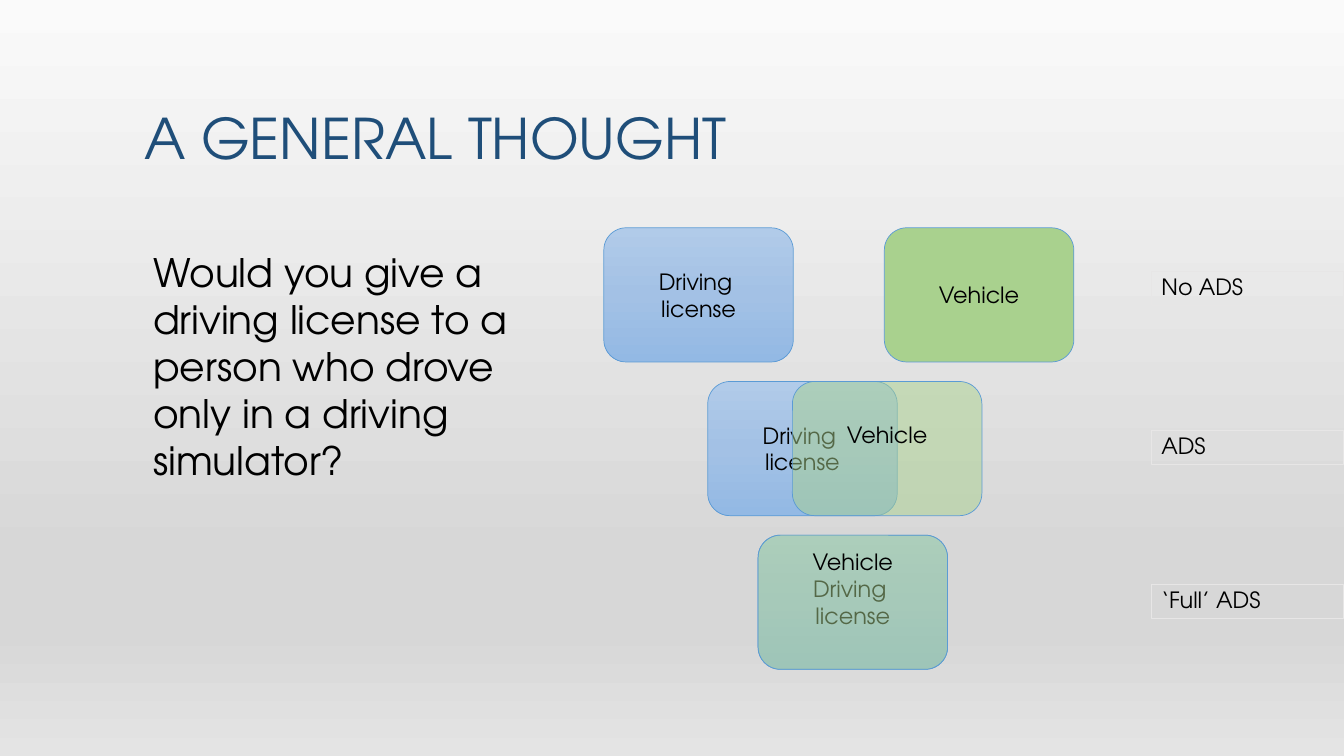
from dataclasses import dataclass

from lxml.etree import SubElement
from pptx import Presentation
from pptx.dml.color import RGBColor
from pptx.enum.shapes import MSO_SHAPE as Preset
from pptx.enum.text import MSO_ANCHOR as Anchor, PP_ALIGN as Align
from pptx.oxml.ns import qn
from pptx.util import Inches, Pt

FONT = "TeX Gyre Adventor"
BLACK = RGBColor(0x00, 0x00, 0x00)
NAVY = RGBColor(0x1F, 0x4E, 0x79)
BLUE = RGBColor(0x5B, 0x9B, 0xD5)
GREEN = RGBColor(0xA9, 0xD1, 0x8E)
PALE = RGBColor(0xE7, 0xE6, 0xE6)
PAGE_STOPS = [
    (0, RGBColor(0xFA, 0xFA, 0xFA)),
    (74, RGBColor(0xD7, 0xD7, 0xD7)),
    (83, RGBColor(0xD7, 0xD7, 0xD7)),
    (100, RGBColor(0xE4, 0xE4, 0xE4)),
]
LICENSE_STOPS = [
    (0, RGBColor(0xB1, 0xCB, 0xE9)),
    (50, RGBColor(0xA3, 0xC1, 0xE5)),
    (100, RGBColor(0x93, 0xB9, 0xE4)),
]

# The slide is a grid of 100 columns by 100 rows
WIDTH, HEIGHT = Inches(13.33), Inches(7.5)
CARD_WIDTH, CARD_HEIGHT = 14.1, 17.75
FIRST_ROW, ROW_STEP = 30.13, 20.33
LABEL_LEFT, LABEL_WIDTH, LABEL_HEIGHT = 85.67, 14.33, 4.53
TEXT_LINE = Inches(0.27)


@dataclass
class Area:
    left: float
    top: float
    width: float
    height: float

    def lengths(self) -> tuple:
        return (
            int(WIDTH * self.left / 100),
            int(HEIGHT * self.top / 100),
            int(WIDTH * self.width / 100),
            int(HEIGHT * self.height / 100),
        )


@dataclass
class Stage:
    license_left: float
    vehicle_left: float
    vehicle_opacity: int
    lines_raised: int
    label: str
    label_top: float


STAGES = [
    Stage(44.93, 65.8, 100, 0, "No ADS", 35.87),
    Stage(52.66, 58.96, 50, 1, "ADS", 56.93),
    Stage(56.41, 56.41, 50, 3, "‘Full’ ADS", 77.33),
]


def fill_gradient(fill, element, stops: list) -> None:
    fill.gradient()
    fill.gradient_angle = 270
    stop_list = element.find(".//" + qn("a:gsLst"))
    stop_list.clear()
    for percent, color in stops:
        stop = SubElement(stop_list, qn("a:gs"), pos=str(percent * 1000))
        SubElement(stop, qn("a:srgbClr"), val=str(color))


def write(box, text: str, size: int, color=BLACK, align=Align.LEFT,
          anchor=Anchor.TOP, spacing: float = 1.0) -> None:
    frame = box.text_frame
    frame.word_wrap = True
    frame.vertical_anchor = anchor
    frame.text = text
    for para in frame.paragraphs:
        para.alignment = align
        para.line_spacing = spacing
        for span in para.runs:
            span.font.name = FONT
            span.font.size = Pt(size)
            span.font.color.rgb = color


def add_box(page, preset, area: Area, line_color, line_width: float):
    box = page.shapes.add_shape(preset, *area.lengths())
    box.shadow.inherit = False
    box.line.color.rgb = line_color
    box.line.width = Pt(line_width)
    return box


def add_card(page, left: float, top: float, text: str):
    area = Area(left, top, CARD_WIDTH, CARD_HEIGHT)
    card = add_box(page, Preset.ROUNDED_RECTANGLE, area, BLUE, 0.5)
    write(card, text, 16, align=Align.CENTER, anchor=Anchor.MIDDLE)
    return card


def add_stage(page, stage: Stage, top: float) -> None:
    license_card = add_card(page, stage.license_left, top, "Driving \nlicense")
    fill_gradient(license_card.fill, license_card.element, LICENSE_STOPS)

    vehicle_card = add_card(page, stage.vehicle_left, top, "Vehicle")
    vehicle_card.fill.solid()
    vehicle_card.fill.fore_color.rgb = GREEN
    if stage.vehicle_opacity < 100:
        color = vehicle_card.element.spPr.find(
            qn("a:solidFill") + "/" + qn("a:srgbClr"))
        SubElement(color, qn("a:alpha"), val=str(stage.vehicle_opacity * 1000))
    # A deeper bottom margin lifts the text clear of the card behind
    vehicle_card.text_frame.margin_bottom = (
        Inches(0.05) + stage.lines_raised * TEXT_LINE)

    area = Area(LABEL_LEFT, stage.label_top, LABEL_WIDTH, LABEL_HEIGHT)
    label = add_box(page, Preset.RECTANGLE, area, PALE, 0.75)
    label.fill.background()
    write(label, stage.label, 16, spacing=0.9)


def main() -> None:
    deck = Presentation()
    deck.slide_width, deck.slide_height = WIDTH, HEIGHT
    page = deck.slides.add_slide(deck.slide_layouts[6])
    fill_gradient(page.background.fill, page.element, PAGE_STOPS)

    # Title and question
    title = page.shapes.add_textbox(*Area(10, 4, 80, 19.33).lengths())
    write(title, "A GENERAL THOUGHT", 40, NAVY,
          anchor=Anchor.BOTTOM, spacing=0.9)
    question = page.shapes.add_textbox(*Area(10.65, 32.13, 31, 32.8).lengths())
    write(question, "Would you give a driving license to a person "
                    "who drove only in a driving simulator?", 28)

    # Three stages of automation, one per row
    for row, stage in enumerate(STAGES):
        add_stage(page, stage, FIRST_ROW + row * ROW_STEP)

    deck.save("out.pptx")


if __name__ == "__main__":
    main()
